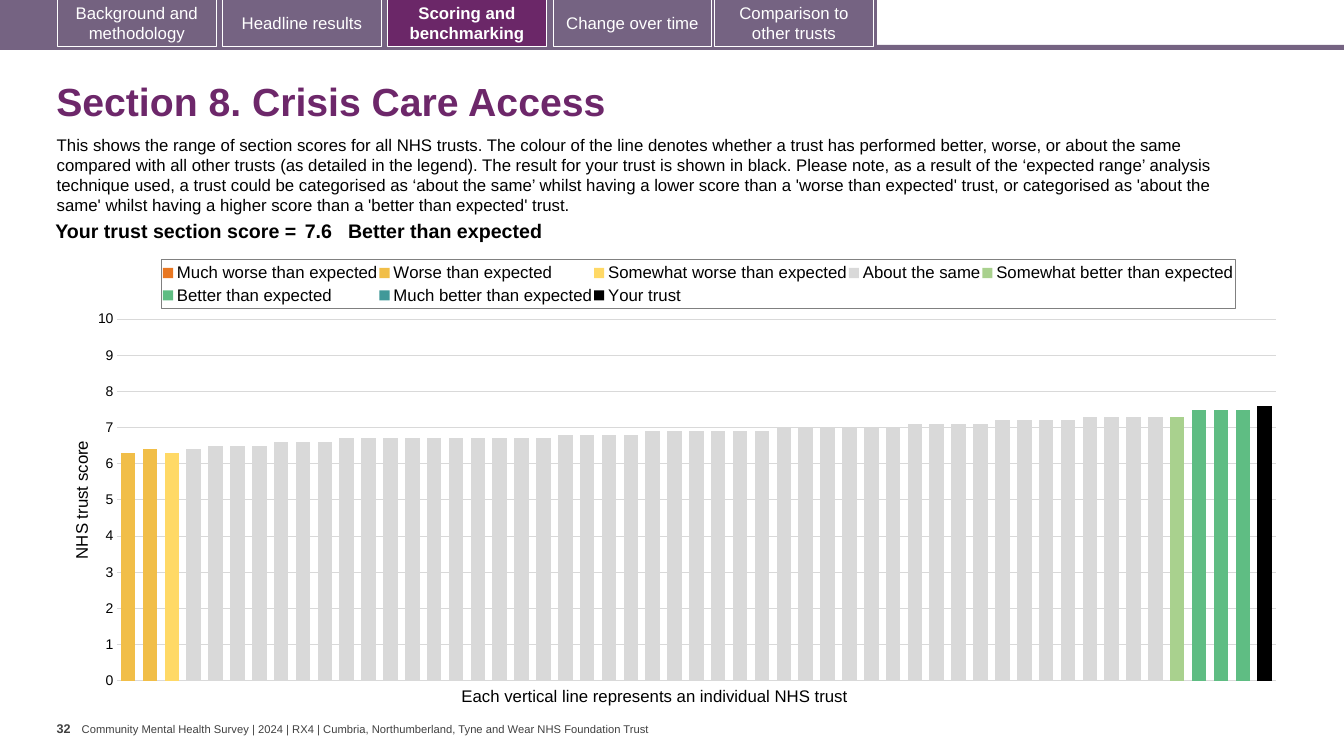
from copy import deepcopy
from dataclasses import dataclass
from lxml import etree
from pptx import Presentation
from pptx import util as u
from pptx.chart import data as cd
from pptx.dml.color import RGBColor
from pptx.enum import chart as ce, shapes, text
from pptx.oxml.ns import qn

Cm, Pt = u.Cm, u.Pt
FONT = "Arial"
HUES = {
    "band": "756382", "tab": "746280", "active": "6B2768", "title": "6D276A",
    "white": "FFFFFF", "black": "000000", "gray": "404040",
    "grid": "D9D9D9", "frame": "808080",
}


@dataclass
class Tab:
    label: str
    left: float
    fill: str = "band"
    bold: bool = False


@dataclass
class Note:
    words: str
    box: tuple[float, float, float, float]
    size: int
    hue: str = "black"
    bold: bool = False
    wrap: bool = False
    inset: tuple[float, float] = (0.25, 0.13)
    middle: bool = False
    space: float = 1.0


@dataclass
class Band:
    name: str
    hue: str
    start: int
    vals: list[float]


TABS = [
    Tab("Background and methodology", 1.45, "tab"),
    Tab("Headline results", 5.61),
    Tab("Scoring and benchmarking", 9.77, "active", True),
    Tab("Change over time", 13.94),
    Tab("Comparison to other trusts", 18.01),
]
INTRO = (
    "This shows the range of section scores for all NHS trusts. The colour of the line "
    "denotes whether a trust has performed better, worse, or about the same compared with "
    "all other trusts (as detailed in the legend). The result for your trust is shown in "
    "black. Please note, as a result of the ‘expected range’ analysis technique used, a "
    "trust could be categorised as ‘about the same’ whilst having a lower score than a "
    "'worse than expected' trust, or categorised as 'about the same' whilst having a higher "
    "score than a 'better than expected' trust."
)
NOTES = [
    Note("Section 8. Crisis Care Access", (1.17, 1.7, 31.72, 1.83), 28, "title", True,
         wrap=True, middle=True, space=0.9),
    Note(INTRO, (1.18, 3.26, 30.81, 2.31), 12, wrap=True),
    Note("Each vertical line represents an individual NHS trust",
         (11.38, 17.15, 10.44, 0.76), 12),
    Note("32", (1.43, 18.03, 0.64, 1.02), 9, "gray", True, inset=(0, 0.13)),
    Note("Community Mental Health Survey | 2024 | RX4 | Cumbria, Northumberland, "
         "Tyne and Wear NHS Foundation Trust", (2.06, 18.21, 14.5, 0.33), 8, "gray",
         inset=(0, 0), middle=True),
]
SCORE = [("Your trust section score =", 6.68), ("7.6", 1.19), ("Better than expected", 21.82)]

COUNT = 53
SAME = [(6.4, 1), (6.5, 3), (6.6, 3), (6.7, 10), (6.8, 4),
        (6.9, 6), (7, 6), (7.1, 4), (7.2, 4), (7.3, 4)]
BANDS = [
    Band("Much worse than expected", "E87722", 0, []),
    Band("Worse than expected", "F1BE48", 0, [6.3, 6.4]),
    Band("Somewhat worse than expected", "FFD966", 2, [6.3]),
    Band("About the same", "D9D9D9", 3, [val for val, num in SAME for _ in range(num)]),
    Band("Somewhat better than expected", "A9D18E", 48, [7.3]),
    Band("Better than expected", "5FBD83", 49, [7.5, 7.5, 7.5, 7.6]),
    Band("Much better than expected", "419999", 0, []),
    Band("Your trust", "000000", 52, [7.6]),
]


def rgb(key: str) -> RGBColor:
    return RGBColor.from_string(HUES.get(key, key))


def style(font, size: int, hue: str = "black", bold: bool = False) -> None:
    font.name, font.size, font.bold = FONT, Pt(size), bold
    font.color.rgb = rgb(hue)


def write(frame, words: str, size: int, hue: str = "black", bold: bool = False,
          align=text.PP_ALIGN.LEFT) -> None:
    frame.text = words
    line = frame.paragraphs[0]
    line.alignment = align
    style(line.runs[0].font, size, hue, bold)


def add_rect(slide, box: tuple, fill: str):
    rect = slide.shapes.add_shape(shapes.MSO_SHAPE.RECTANGLE, *map(Cm, box))
    rect.shadow.inherit = False
    rect.fill.solid()
    rect.fill.fore_color.rgb = rgb(fill)
    rect.line.fill.background()
    return rect


def add_tab(slide, tab: Tab) -> None:
    rect = add_rect(slide, (tab.left, -0.03, 4, 1.2), tab.fill)
    rect.line.color.rgb = rgb("white")
    rect.line.width = Pt(0.75)
    rect.text_frame.word_wrap = True
    rect.text_frame.vertical_anchor = text.MSO_ANCHOR.MIDDLE
    write(rect.text_frame, tab.label, 12, "white", tab.bold, text.PP_ALIGN.CENTER)


def add_note(slide, note: Note) -> None:
    frame = slide.shapes.add_textbox(*map(Cm, note.box)).text_frame
    frame.word_wrap = note.wrap
    frame.margin_left = frame.margin_right = Cm(note.inset[0])
    frame.margin_top = frame.margin_bottom = Cm(note.inset[1])
    anchor = text.MSO_ANCHOR
    frame.vertical_anchor = anchor.MIDDLE if note.middle else anchor.TOP
    write(frame, note.words, note.size, note.hue, note.bold)
    frame.paragraphs[0].line_spacing = note.space


def add_score(slide) -> None:
    width = sum(wide for _, wide in SCORE)
    grid = slide.shapes.add_table(1, len(SCORE), Cm(0.9), Cm(5.46), Cm(width), Cm(0.79)).table
    grid.first_row = grid.horz_banding = False
    for col, (words, wide) in enumerate(SCORE):
        grid.columns[col].width = Cm(wide)
        cell = grid.cell(0, col)
        cell.fill.background()
        cell.margin_left = cell.margin_right = Cm(0 if col == 2 else 0.1)
        cell.margin_top = cell.margin_bottom = Cm(0.1)
        align = text.PP_ALIGN.LEFT if col else text.PP_ALIGN.RIGHT
        write(cell.text_frame, words, 14, bold=True, align=align)


def layout(box: tuple, inner: bool = False):
    root = etree.Element(qn("c:layout"))
    manual = etree.SubElement(root, qn("c:manualLayout"))
    parts = [("layoutTarget", "inner")] if inner else []
    parts += [("xMode", "edge"), ("yMode", "edge"), *zip("xywh", box)]
    for tag, val in parts:
        etree.SubElement(manual, qn("c:" + tag)).set("val", str(val))
    return root


def add_legend(chart) -> None:
    chart.has_legend = True
    legend = chart.legend
    legend.position = ce.XL_LEGEND_POSITION.TOP
    legend.include_in_layout = False
    style(legend.font, 12)
    node = legend._element
    for old in node.findall(qn("c:layout")):
        node.remove(old)
    node.find(qn("c:legendPos")).addnext(layout((0.076, 0.025, 0.877, 0.11)))
    props = etree.Element(qn("c:spPr"))
    edge = etree.SubElement(props, qn("a:ln"), w=str(Pt(0.75)))
    fill = etree.SubElement(edge, qn("a:solidFill"))
    etree.SubElement(fill, qn("a:srgbClr"), val=HUES["frame"])
    node.find(qn("c:overlay")).addnext(props)


def split_last(area) -> None:
    """Move the last series to a second, unlabelled axis on the right."""
    bars, cat, val = (area.find(qn("c:" + tag)) for tag in ("barChart", "catAx", "valAx"))
    extra, base, right = map(deepcopy, (bars, cat, val))
    bars.remove(bars.findall(qn("c:ser"))[-1])
    for old in extra.findall(qn("c:ser"))[:-1]:
        extra.remove(old)
    ids = {cat.find(qn("c:axId")).get("val"): "5001", val.find(qn("c:axId")).get("val"): "5002"}
    for part in (extra, base, right):
        for node in part.iter(qn("c:axId"), qn("c:crossAx")):
            node.set("val", ids[node.get("val")])
    for tag in ("majorGridlines", "title"):
        right.remove(right.find(qn("c:" + tag)))
    for tag, word in (("axPos", "r"), ("tickLblPos", "none"), ("crosses", "max")):
        right.find(qn("c:" + tag)).set("val", word)
    bars.addnext(extra)
    val.addnext(right)
    right.addnext(base)


def add_bars(slide) -> None:
    data = cd.CategoryChartData()
    data.categories = [str(num + 1) for num in range(COUNT)]
    for band in BANDS:
        tail = COUNT - band.start - len(band.vals)
        data.add_series(band.name, [None] * band.start + band.vals + [None] * tail)
    chart = slide.shapes.add_chart(ce.XL_CHART_TYPE.COLUMN_CLUSTERED, Cm(1.72), Cm(6.26),
                                   Cm(30.86), Cm(11.28), data).chart
    chart.has_title = False
    style(chart.font, 10)
    plot = chart.plots[0]
    plot.gap_width, plot.overlap, plot.vary_by_categories = 50, 100, False
    for band, bars in zip(BANDS, plot.series):
        bars.format.fill.solid()
        bars.format.fill.fore_color.rgb = rgb(band.hue)

    # Axes
    chart.category_axis.visible = False
    axis = chart.value_axis
    axis.minimum_scale, axis.maximum_scale, axis.major_unit = 0, 10, 1
    axis.major_tick_mark = ce.XL_TICK_MARK.NONE
    axis.format.line.fill.background()
    axis.major_gridlines.format.line.color.rgb = rgb("grid")
    axis.major_gridlines.format.line.width = Pt(0.75)
    style(axis.tick_labels.font, 10)
    write(axis.axis_title.text_frame, "NHS trust score", 12, align=text.PP_ALIGN.CENTER)
    axis.axis_title._element.find(".//" + qn("a:bodyPr")).set("rot", "-5400000")

    # Plot area and legend
    area = chart._chartSpace.find(".//" + qn("c:plotArea"))
    for old in area.findall(qn("c:layout")):
        area.remove(old)
    area.insert(0, layout((0.04, 0.158, 0.946, 0.808), True))
    split_last(area)
    add_legend(chart)


def main() -> None:
    deck = Presentation()
    deck.slide_width, deck.slide_height = Cm(33.87), Cm(19.05)
    slide = deck.slides.add_slide(deck.slide_layouts[6])
    # Navigation bar
    add_rect(slide, (0, 1.13, 33.87, 0.13), "band")
    add_rect(slide, (0, 0, 22.1, 1.19), "band")
    for tab in TABS:
        add_tab(slide, tab)
    # Text, chart and score line
    for note in NOTES:
        add_note(slide, note)
    add_bars(slide)
    add_score(slide)
    deck.save("out.pptx")


if __name__ == "__main__":
    main()
